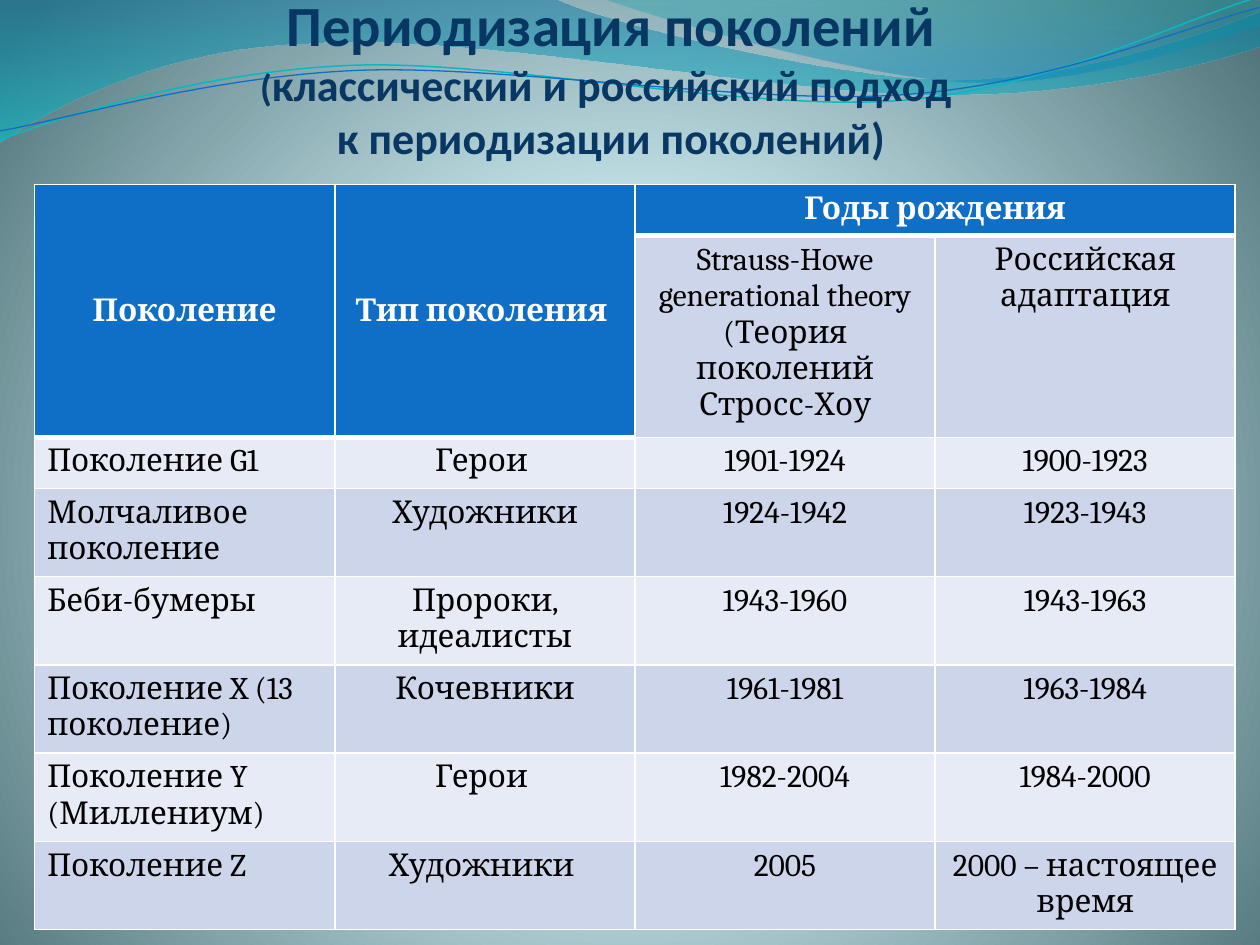
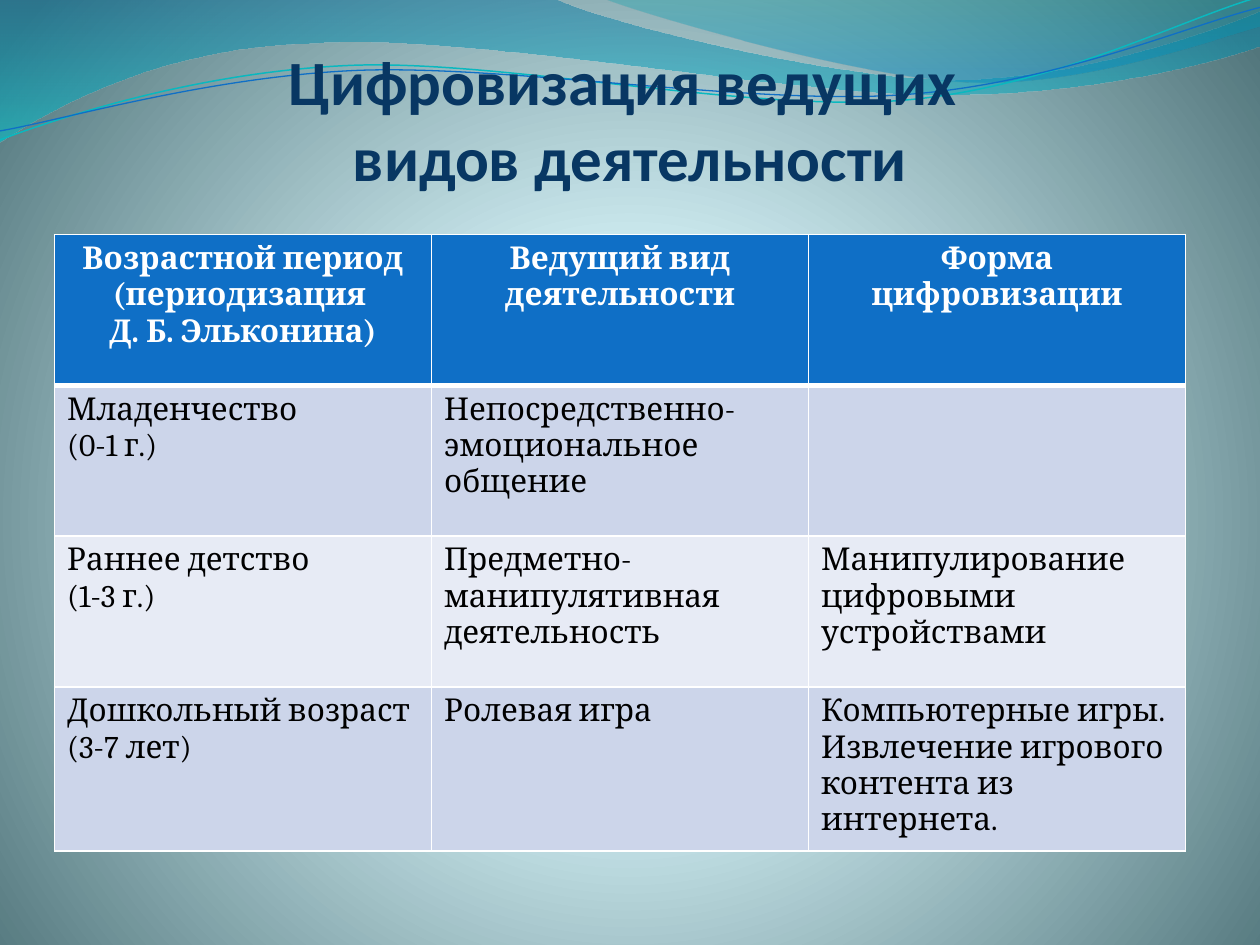
from lxml.etree import SubElement
from pptx import Presentation
from pptx.dml.color import RGBColor
from pptx.enum.text import MSO_ANCHOR, PP_ALIGN
from pptx.oxml import parse_xml
from pptx.oxml.ns import nsdecls, qn
from pptx.util import Cm, Pt

COLORS = {
    "title": "083763", "header": "0F6FC6", "band": "CCD5EA", "light": "E7EBF5",
    "white": "FFFFFF", "black": "000000", "teal_line": "0AB8BF", "blue_line": "0F6FC6",
    "glow": "DEFBFF", "glow_rim": "DDFAFF", "slate": "52767C", "deep_blue": "0074A1",
    "turquoise": "00C6CF", "sea": "00A1A9", "sky": "008BBF",
}
TITLE_FONT, TABLE_FONT = "Calibri", "Cambria"
BACKDROP = [(0, "glow", 100), (25, "glow_rim", 100), (100, "slate", 100)]
BACKDROP_SHADE = '<a:path path="circle"><a:fillToRect l="10000" t="110000" r="10000" b="100000"/></a:path>'
DOWNWARD_SHADE = '<a:lin ang="5400000" scaled="0"/>'

WAVES = [
    ((0, 0), [(11.18, -0.03), (12.09, 0.43, 16.87, 1.6, 19.25, 1.6),
              (21.67, 1.6, 24.33, 0.66, 25.4, 0.23), (25.43, 0.91),
              (24.97, 1.12, 22.1, 1.93, 18.95, 1.91), (15.8, 1.91, 9.7, 0.71, 6.53, 0.86),
              (3.28, 0.91, 1.17, 2.11, -0.03, 2.87), (0, 0)],
     [(0, "deep_blue", 45), (100, "turquoise", 55)]),
    ((12.17, -0.03), [(12.93, 0.28, 17.32, 1.57, 19.53, 1.65),
                      (21.74, 1.75, 24.41, 0.81, 25.4, 0.53), (25.4, 0), (12.17, -0.03)],
     [(0, "sea", 30), (80, "sky", 45)]),
]
STRANDS = [
    ((0, 2.82), [(1.22, 2.36, 4.01, 1.45, 7.04, 1.32), (10.03, 1.19, 15.06, 2.26, 18.11, 2.03),
                 (21.16, 1.8, 23.83, 0.38, 25.35, -0.05)], "teal_line", 0.85),
    ((0, 2.64), [(1.19, 2.44, 4.17, 1.55, 7.19, 1.42), (10.24, 1.3, 15.16, 2.13, 18.21, 1.91),
                 (21.23, 1.7, 23.9, 0.53, 25.4, 0.15)], "blue_line", 0.75),
]

GENERATIONS = [
    ["Поколение", "Тип поколения ", "Годы рождения", ""],
    ["", "", "Strauss-Howe generational theory\n(Теория поколений Стросс-Хоу", "Российская адаптация"],
    ["Поколение G1", "Герои ", "1901-1924", "1900-1923"],
    ["Молчаливое поколение", "Художники", "1924-1942", "1923-1943"],
    ["Беби-бумеры", "Пророки, идеалисты", "1943-1960", "1943-1963"],
    ["Поколение X (13 поколение)", "Кочевники", "1961-1981", "1963-1984"],
    ["Поколение Y (Миллениум)", "Герои ", "1982-2004", "1984-2000"],
    ["Поколение Z", "Художники ", "2005", "2000 – настоящее время"],
]
ACTIVITIES = [
    ["Возрастной период (периодизация \nД. Б. Эльконина)", "Ведущий вид деятельности", "Форма цифровизации"],
    ["Младенчество\n(0-1 г.)", "Непосредственно-эмоциональное общение", ""],
    ["Раннее детство\n(1-3 г.)", "Предметно-манипулятивная деятельность",
     "Манипулирование цифровыми устройствами"],
    ["Дошкольный возраст\n(3-7 лет)", "Ролевая игра",
     "Компьютерные игры. Извлечение игрового контента из интернета."],
]


def color(name):
    """Return the named colour."""
    return RGBColor.from_string(COLORS[name])


def set_font(font, name, size, bold, fill):
    """Set the usual properties of a font."""
    font.name, font.size, font.bold = name, Pt(size), bold
    font.color.rgb = color(fill)


def set_gradient(props, stops, shade):
    """Swap the solid fill in props for a gradient of (position, colour, opacity) stops."""
    gs = "".join(
        f'<a:gs pos="{pos * 1000}"><a:srgbClr val="{COLORS[name]}">'
        f'<a:alpha val="{alpha * 1000}"/></a:srgbClr></a:gs>' for pos, name, alpha in stops)
    grad = parse_xml(f'<a:gradFill {nsdecls("a")} rotWithShape="1"><a:gsLst>{gs}</a:gsLst>{shade}</a:gradFill>')
    props.replace(props.find(qn("a:solidFill")), grad)


def add_curve(slide, left, top, start, segments, close):
    """Draw a freeform of lines (2 numbers) and cubic curves (6 numbers)."""
    points = [(Cm(x), Cm(y)) for seg in segments for x, y in zip(seg[::2], seg[1::2])]
    builder = slide.shapes.build_freeform(Cm(start[0]), Cm(start[1]))
    builder.add_line_segments(points, close=close)
    sp = builder.convert_to_shape(Cm(left), Cm(top))
    sp.shadow.inherit = False
    outline = sp.element.find(".//" + qn("a:path"))
    lines = iter(outline.findall(qn("a:lnTo")))
    for seg in segments:
        line = next(lines)
        if len(seg) == 6:
            line.addprevious(curve := SubElement(outline, qn("a:cubicBezTo")))
            for part in (line, next(lines), next(lines)):
                curve.append(part[0])
                outline.remove(part)
    return sp


def add_waves(slide, left=0, top=0):
    """Draw the translucent waves and the thin strands."""
    for start, segments, stops in WAVES:
        sp = add_curve(slide, left, top, start, segments, True)
        sp.fill.solid()
        set_gradient(sp.element.spPr, stops, DOWNWARD_SHADE)
        sp.line.fill.background()
    for start, segments, name, width in STRANDS:
        sp = add_curve(slide, left, top, start, segments, False)
        sp.fill.background()
        sp.line.color.rgb = color(name)
        sp.line.width = Pt(width)


def dress_master(master, slide):
    """Give the master its backdrop and move the waves drawn on a slide to it."""
    master.background.fill.solid()
    set_gradient(master.element.find(".//" + qn("p:bgPr")), BACKDROP, BACKDROP_SHADE)
    add_waves(slide)
    for i, sp in enumerate(list(slide.shapes)):
        sp.element.find(".//" + qn("p:cNvPr")).set("id", str(100 + i))
        master.shapes._spTree.append(sp.element)


def add_title(slide, box, lines):
    """Write a bottom-anchored title whose lines are lists of (text, size) runs."""
    tf = slide.shapes.add_textbox(*map(Cm, box)).text_frame
    tf.word_wrap = True
    tf.vertical_anchor = MSO_ANCHOR.BOTTOM
    tf.margin_left = tf.margin_right = tf.margin_bottom = 0
    p = tf.paragraphs[0]
    p.alignment = PP_ALIGN.CENTER
    for i, line in enumerate(lines):
        if i:
            p.add_line_break()
        for text, size in line:
            r = p.add_run()
            r.text = text
            set_font(r.font, TITLE_FONT, size, True, "title")


def set_borders(cell, widths):
    """Give a cell white borders of the given side widths in points."""
    tc_pr = cell._tc.get_or_add_tcPr()
    for i, (side, width) in enumerate(widths.items()):
        tc_pr.insert(i, parse_xml(
            f'<a:ln{side} {nsdecls("a")} w="{Pt(width)}"><a:solidFill>'
            f'<a:srgbClr val="{COLORS["white"]}"/></a:solidFill></a:ln{side}>'))


def style_cell(cell, text, is_head, fill, centred):
    """Fill one cell and set its text."""
    cell.fill.solid()
    cell.fill.fore_color.rgb = color(fill)
    cell.text = text
    for p in cell.text_frame.paragraphs:
        p.alignment = PP_ALIGN.CENTER if centred else PP_ALIGN.LEFT
        for part in (p, *p.runs):
            set_font(part.font, TABLE_FONT, 18, is_head, "white" if is_head else "black")


def add_grid(slide, box, row_height, rows, heads=(), centred_cols=(), merges=()):
    """Add a banded table; heads lists header cells below the first row."""
    cols = len(rows[0])
    left, top, width, height = map(Cm, box)
    frame = slide.shapes.add_table(len(rows), cols, left, top, width, height)
    table = frame.table
    for i, row in enumerate(rows):
        table.rows[i].height = Cm(row_height)
        for j, text in enumerate(row):
            is_head = i == 0 or (i, j) in heads
            fill = "header" if is_head else "band" if i % 2 else "light"
            cell = table.cell(i, j)
            style_cell(cell, text, is_head, fill, is_head or j in centred_cols)
            sides = {"L": 1, "R": 1, "T": 1, "B": 3 if is_head else 1}
            if i:
                del sides["T"]
            set_borders(cell, sides)
    frame.height = height
    for first, last in merges:
        cell = table.cell(*first)
        cell.merge(table.cell(*last))
        if first[0] != last[0]:
            cell.vertical_anchor = MSO_ANCHOR.MIDDLE


def generations_slide(slide):
    """Build the slide on generations and their birth years."""
    add_title(slide, (0.89, 1.52, 22.86, 1.78), [
        [("Периодизация поколений", 32.4)],
        [("(", 21.6), ("классический и российский подход ", 25.2)],
        [("к периодизации поколений)", 25.2)]])
    add_grid(slide, (0.7, 3.72, 24.2, 15.01), 1.03, GENERATIONS,
             heads={(1, 0), (1, 1)}, centred_cols={1, 2, 3},
             merges=[((0, 0), (1, 0)), ((0, 1), (1, 1)), ((0, 2), (0, 3))])


def activities_slide(slide):
    """Build the slide on digital forms of leading activities."""
    add_title(slide, (0, 0.73, 25.4, 3.18),
              [[("Цифровизация ведущих ", 36)], [("видов деятельности", 36)]])
    add_grid(slide, (1.1, 4.73, 22.8, 12.16), 3.04, ACTIVITIES)


def main():
    """Build and save the presentation."""
    prs = Presentation()
    prs.slide_width, prs.slide_height = Cm(25.4), Cm(19.05)
    slides = [prs.slides.add_slide(prs.slide_layouts[6]) for _ in range(2)]
    dress_master(prs.slide_master, slides[0])
    generations_slide(slides[0])
    activities_slide(slides[1])
    prs.save("out.pptx")


if __name__ == "__main__":
    main()
